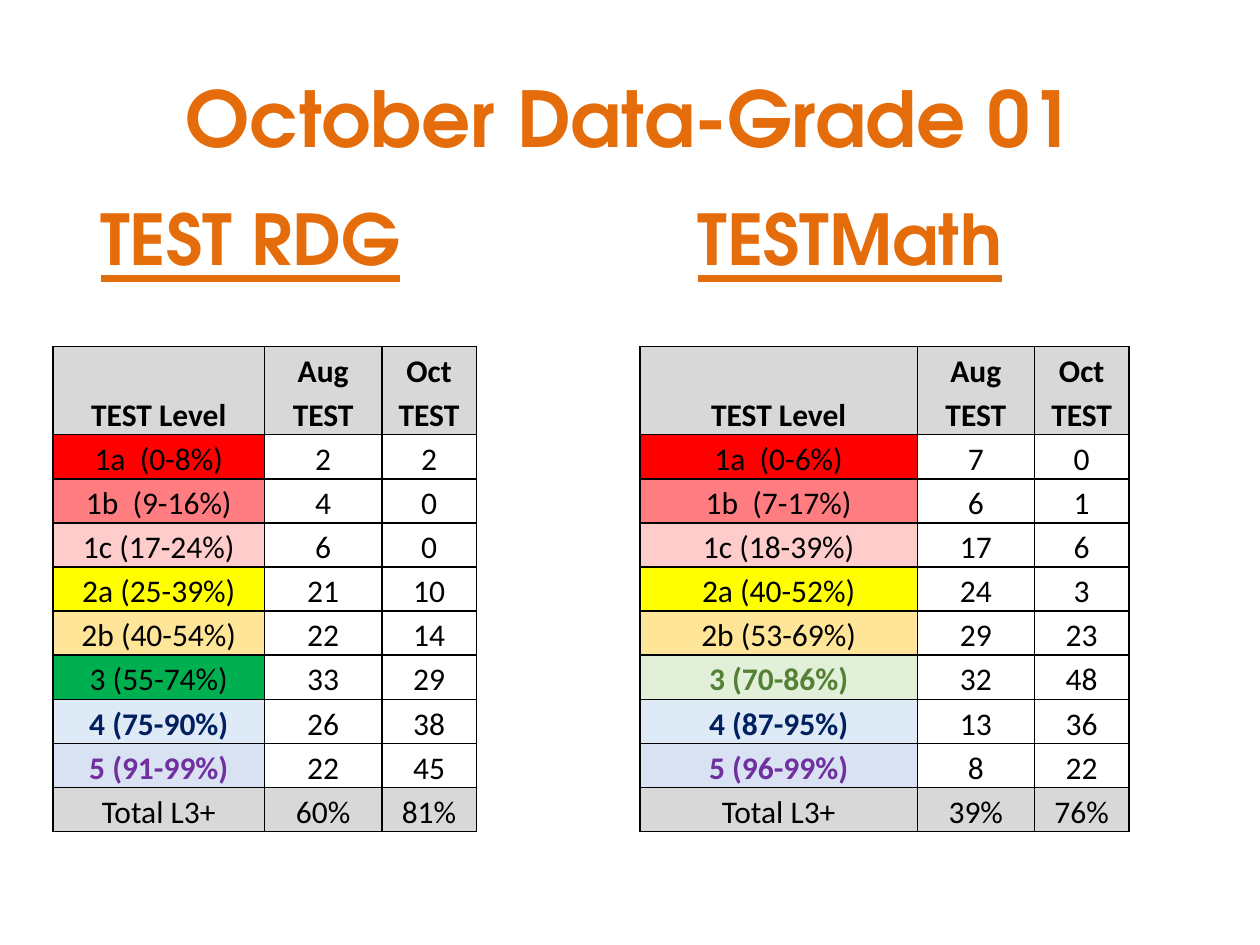
from lxml import etree
from pptx import Presentation
from pptx.dml.color import RGBColor
from pptx.enum import text
from pptx.oxml import ns
from pptx.util import Inches, Pt

HEADING_FONT, BODY_FONT = "TeX Gyre Adventor", "Calibri"
ORANGE, BLACK, WHITE, GREY = "E46C0A", "000000", "FFFFFF", "D8D8D8"
ROW_HEIGHT = 0.35
HEADER = ("TEST Level", "Aug TEST", "Oct TEST")

# Label, August, October, label fill, label colour (bold when not black)
READING = [
    ("1a  (0-8%)", "2", "2", "FF0000", BLACK),
    ("1b  (9-16%)", "4", "0", "FF7C80", BLACK),
    ("1c (17-24%)", "6", "0", "FFCCCC", BLACK),
    ("2a (25-39%)", "21", "10", "FFFF00", BLACK),
    ("2b (40-54%)", "22", "14", "FFE598", BLACK),
    ("3 (55-74%)", "33", "29", "00B050", BLACK),
    ("4 (75-90%)", "26", "38", "DEEAF6", "002060"),
    ("5 (91-99%)", "22", "45", "D9E2F3", "7030A0"),
]
MATH = [
    ("1a  (0-6%)", "7", "0", "FF0000", BLACK),
    ("1b  (7-17%)", "6", "1", "FF7C80", BLACK),
    ("1c (18-39%)", "17", "6", "FFCCCC", BLACK),
    ("2a (40-52%)", "24", "3", "FFFF00", BLACK),
    ("2b (53-69%)", "29", "23", "FFE598", BLACK),
    ("3 (70-86%)", "32", "48", "E2EFD9", "548135"),
    ("4 (87-95%)", "13", "36", "DEEAF6", "002060"),
    ("5 (96-99%)", "8", "22", "D9E2F3", "7030A0"),
]


def rgb(value):
    return RGBColor.from_string(value)


def style(r, font, size, color, bold=False, underline=False):
    r.font.name, r.font.size = font, Pt(size)
    r.font.color.rgb = rgb(color)
    r.font.bold, r.font.underline = bold, underline


def add_box(s, left, top, width, height):
    tf = s.shapes.add_textbox(*map(Inches, (left, top, width, height))).text_frame
    tf.word_wrap = True
    return tf


def add_title(s, title):
    tf = add_box(s, 0.5, 0.3, 9, 1.25)
    tf.vertical_anchor = text.MSO_ANCHOR.MIDDLE
    tf.text = title
    p = tf.paragraphs[0]
    p.alignment = text.PP_ALIGN.CENTER
    style(p.runs[0], HEADING_FONT, 44, ORANGE, bold=True)


def add_subject_headings(s, reading, math):
    p = add_box(s, 0.7, 1.5, 8.8, 0.8).paragraphs[0]
    # Tab stops: end of first underline, second heading, end of second underline
    tabs = etree.SubElement(p._p.get_or_add_pPr(), ns.qn("a:tabLst"))
    for stop in (2.87, 4.74, 7.5):
        etree.SubElement(tabs, ns.qn("a:tab"), pos=str(Inches(stop)), algn="l")
    for words, underline in ((reading + "\t", True), ("\t", False), (math + "\t", True)):
        r = p.add_run()
        r.text = words
        style(r, HEADING_FONT, 40, ORANGE, bold=True, underline=underline)


def add_borders(cell):
    tcPr = cell._tc.get_or_add_tcPr()
    for i, side in enumerate(("lnL", "lnR", "lnT", "lnB")):
        ln = etree.Element(ns.qn("a:" + side), w=str(Pt(1)))
        fill = etree.SubElement(ln, ns.qn("a:solidFill"))
        etree.SubElement(fill, ns.qn("a:srgbClr"), val=BLACK)
        tcPr.insert(i, ln)


def fill_cell(cell, words, fill, color=BLACK, bold=False):
    cell.text = words
    cell.vertical_anchor = text.MSO_ANCHOR.BOTTOM
    cell.margin_left = cell.margin_right = Inches(0.07)
    cell.margin_top = cell.margin_bottom = 0
    cell.fill.solid()
    cell.fill.fore_color.rgb = rgb(fill)
    add_borders(cell)
    p = cell.text_frame.paragraphs[0]
    p.alignment = text.PP_ALIGN.CENTER
    p.line_spacing = 1.15
    style(p.runs[0], BODY_FONT, 18, color, bold)


def add_level_table(s, left, label_width, levels, totals):
    widths = (label_width, 0.93, 0.75)
    heights = [2 * ROW_HEIGHT] + [ROW_HEIGHT] * (len(levels) + 1)
    table = s.shapes.add_table(len(heights), len(widths), Inches(left), Inches(2.75),
                               Inches(sum(widths)), Inches(sum(heights))).table
    for column, width in zip(table.columns, widths):
        column.width = Inches(width)
    for row, height in zip(table.rows, heights):
        row.height = Inches(height)

    # Header and total rows
    for c, (head, total) in enumerate(zip(HEADER, ("Total L3+", *totals))):
        fill_cell(table.cell(0, c), head, GREY, bold=True)
        fill_cell(table.cell(len(heights) - 1, c), total, GREY)

    # One row per level
    for i, (label, aug, octo, fill, color) in enumerate(levels, 1):
        fill_cell(table.cell(i, 0), label, fill, color, bold=color != BLACK)
        fill_cell(table.cell(i, 1), aug, WHITE)
        fill_cell(table.cell(i, 2), octo, WHITE)


def main():
    prs = Presentation()
    prs.slide_width, prs.slide_height = Inches(10), Inches(7.5)
    s = prs.slides.add_slide(prs.slide_layouts[6])
    add_title(s, "October Data-Grade 01")
    add_subject_headings(s, "TEST RDG", "TESTMath")
    add_level_table(s, 0.42, 1.68, READING, ("60%", "81%"))
    add_level_table(s, 5.08, 2.2, MATH, ("39%", "76%"))
    prs.save("out.pptx")


if __name__ == "__main__":
    main()
